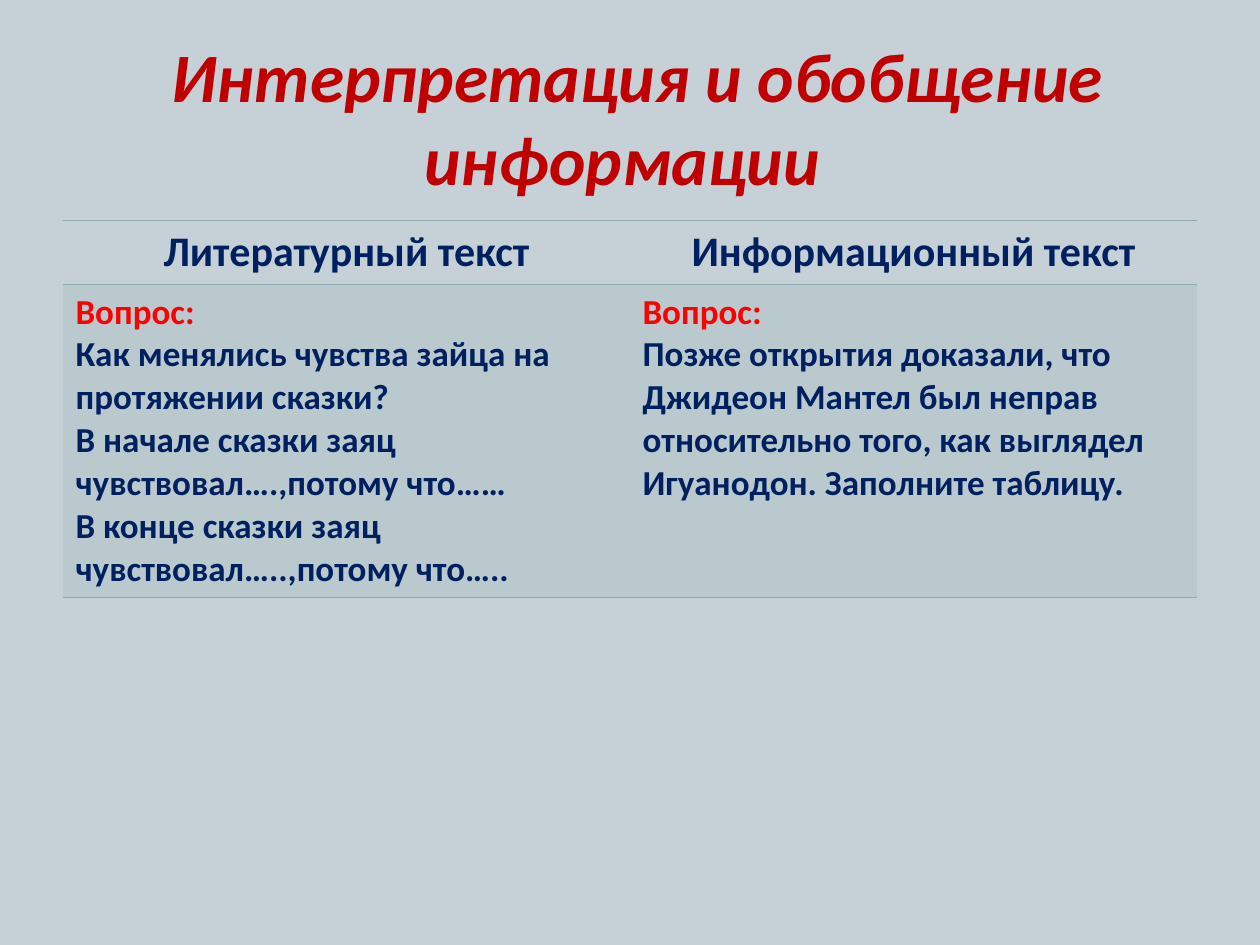
from lxml import etree
from pptx import Presentation
from pptx.dml.color import RGBColor
from pptx.enum import text
from pptx.oxml import ns
from pptx.util import Pt

NAVY = RGBColor(0x00, 0x20, 0x60)
DARK_RED = RGBColor(0xC0, 0x00, 0x00)
RED = RGBColor(0xFF, 0x00, 0x00)
TEAL = RGBColor(0x8C, 0xAD, 0xAE)
BACKGROUND = RGBColor(0xC5, 0xD1, 0xD7)

# The spaces around the title shift its centred lines slightly.
TITLE = " Интерпретация и обобщение информации "
QUESTION = "Вопрос:"
COLUMNS = [
    ("Литературный текст", [
        "Как менялись чувства зайца на протяжении сказки?",
        "В начале сказки заяц чувствовал….,потому что……",
        "В конце сказки заяц чувствовал…..,потому что…..",
    ]),
    ("Информационный текст", [
        "Позже открытия доказали, что Джидеон Мантел был неправ относительно "
        "того, как выглядел Игуанодон. Заполните таблицу.",
    ]),
]
LEFT, WIDTH = 36, 648
ROW_HEIGHTS = (36.5, 179)


def add_run(paragraph, words, size, color, italic=False):
    run = paragraph.add_run()
    run.text = words
    font = run.font
    font.name, font.size, font.bold, font.italic = "Calibri", Pt(size), True, italic
    font.color.rgb = color


def set_borders(cell, visible):
    """Draw the named sides in teal and hide the others."""
    properties = cell._tc.get_or_add_tcPr()
    for index, side in enumerate(("lnL", "lnR", "lnT", "lnB")):
        line = etree.Element(ns.qn(f"a:{side}"), w=str(Pt(1)))
        if side in visible:
            fill = etree.SubElement(line, ns.qn("a:solidFill"))
            etree.SubElement(fill, ns.qn("a:srgbClr"), val=str(TEAL))
        else:
            etree.SubElement(line, ns.qn("a:noFill"))
        properties.insert(index, line)


def set_tint(cell):
    """Fill the cell with teal at 20 % opacity."""
    cell.fill.solid()
    cell.fill.fore_color.rgb = TEAL
    color = cell._tc.tcPr.find(".//" + ns.qn("a:srgbClr"))
    etree.SubElement(color, ns.qn("a:alpha"), val="20000")


def add_title(slide):
    title = slide.shapes.title
    title.left, title.top, title.width, title.height = Pt(LEFT), Pt(21.6), Pt(WIDTH), Pt(90)
    frame = title.text_frame
    frame.word_wrap = True
    frame.auto_size = text.MSO_AUTO_SIZE.NONE
    frame.vertical_anchor = text.MSO_ANCHOR.MIDDLE
    paragraph = frame.paragraphs[0]
    paragraph.alignment = text.PP_ALIGN.CENTER
    add_run(paragraph, TITLE, 39.6, DARK_RED, italic=True)


def add_comparison(slide):
    table = slide.shapes.add_table(len(ROW_HEIGHTS), len(COLUMNS), Pt(LEFT), Pt(126),
                                   Pt(WIDTH), Pt(sum(ROW_HEIGHTS))).table
    table.first_row = table.horz_banding = False
    for row, height in zip(table.rows, ROW_HEIGHTS):
        row.height = Pt(height)
    for index, (heading, lines) in enumerate(COLUMNS):
        header, body = table.cell(0, index), table.cell(1, index)
        header.fill.background()
        set_borders(header, ("lnT", "lnB"))
        paragraph = header.text_frame.paragraphs[0]
        paragraph.alignment = text.PP_ALIGN.CENTER
        add_run(paragraph, heading, 24, NAVY)

        set_tint(body)
        set_borders(body, ("lnT", "lnB"))
        frame = body.text_frame
        add_run(frame.paragraphs[0], QUESTION, 20, RED)
        for line in lines:
            add_run(frame.add_paragraph(), line, 20, NAVY)


def main():
    presentation = Presentation()
    presentation.slide_width, presentation.slide_height = Pt(720), Pt(540)
    slide = presentation.slides.add_slide(presentation.slide_layouts[5])
    slide.background.fill.solid()
    slide.background.fill.fore_color.rgb = BACKGROUND
    add_title(slide)
    add_comparison(slide)
    presentation.save("out.pptx")


if __name__ == "__main__":
    main()
